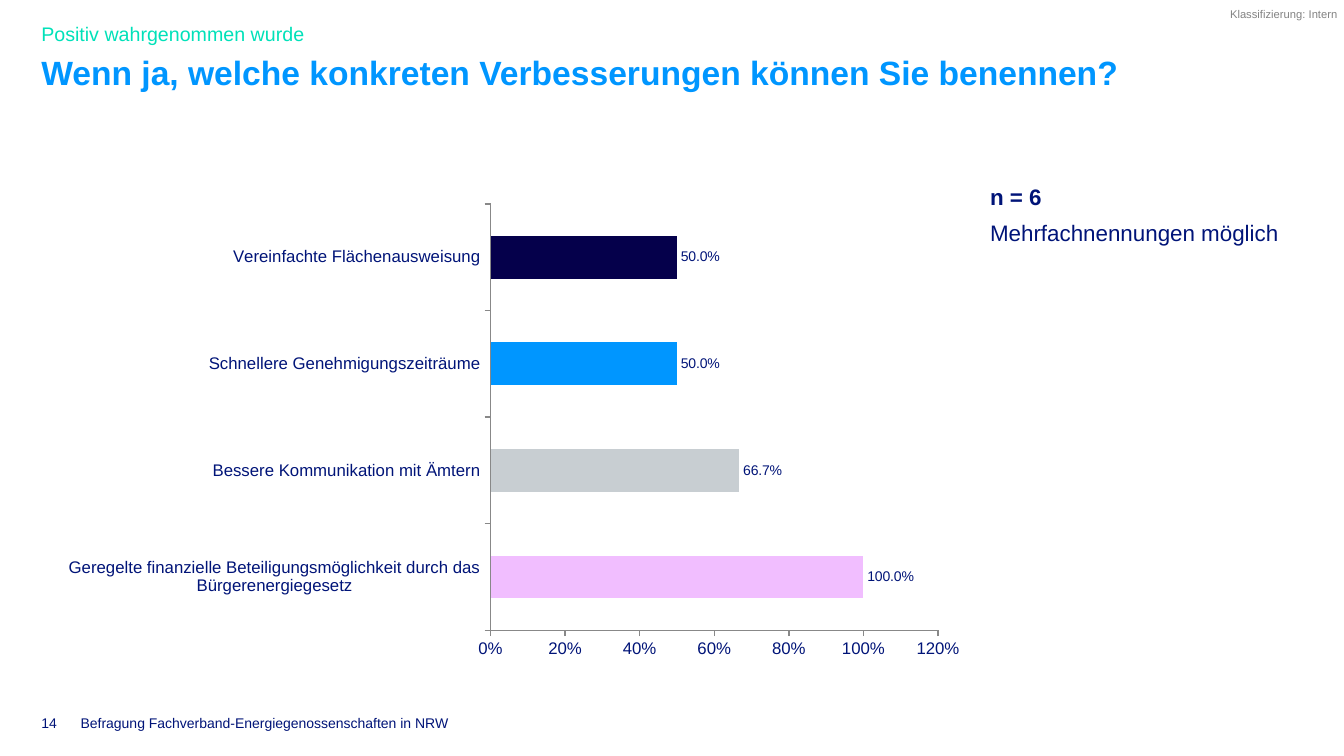
import pptx
import pptx.chart.data
import pptx.dml.color
import pptx.enum.chart
import pptx.enum.text
import pptx.oxml
import pptx.util
from pptx.util import Inches

NAVY = "001478"
BLUE = "0096FF"
GRAY = "888888"
TOP = pptx.enum.text.MSO_ANCHOR.TOP
BOTTOM = pptx.enum.text.MSO_ANCHOR.BOTTOM

ANSWERS = [
    ("Geregelte finanzielle Beteiligungsmöglichkeit durch das Bürgerenergiegesetz", 1, "F1BEFF"),
    ("Bessere Kommunikation mit Ämtern", 0.667, "C8CED2"),
    ("Schnellere Genehmigungszeiträume", 0.5, BLUE),
    ("Vereinfachte Flächenausweisung", 0.5, "05004B"),
]


def rgb(color):
    return pptx.dml.color.RGBColor.from_string(color)


def set_font(font, size, color, bold=False):
    font.name = "Arial"
    font.size = pptx.util.Pt(size)
    font.bold = bold
    font.color.rgb = rgb(color)


def add_text(s, box, lines, size, color, bold=(), anchor=TOP, wrap=True):
    tf = s.shapes.add_textbox(*map(Inches, box)).text_frame
    tf.margin_left = tf.margin_top = tf.margin_right = tf.margin_bottom = 0
    tf.word_wrap = wrap
    tf.vertical_anchor = anchor
    tf.text = "\n".join(lines)
    for i, p in enumerate(tf.paragraphs):
        if i:
            p.space_before = pptx.util.Pt(6)
        for r in p.runs:
            set_font(r.font, size, color, i in bold)


def style_axis(axis):
    axis.has_major_gridlines = False
    axis.major_tick_mark = pptx.enum.chart.XL_TICK_MARK.OUTSIDE
    axis.minor_tick_mark = pptx.enum.chart.XL_TICK_MARK.NONE
    axis.format.line.color.rgb = rgb(GRAY)
    axis.format.line.width = pptx.util.Pt(1)
    set_font(axis.tick_labels.font, 12, NAVY)


def place_plot(chart, x, y, w, h):
    area = chart._chartSpace.chart.plotArea
    for old in area.findall(pptx.oxml.ns.qn("c:layout")):
        area.remove(old)
    area.insert(0, pptx.oxml.parse_xml(
        f'<c:layout {pptx.oxml.ns.nsdecls("c")}><c:manualLayout>'
        '<c:layoutTarget val="inner"/><c:xMode val="edge"/><c:yMode val="edge"/>'
        f'<c:x val="{x}"/><c:y val="{y}"/><c:w val="{w}"/><c:h val="{h}"/>'
        '</c:manualLayout></c:layout>'))


def add_bar_chart(s, box, answers):
    data = pptx.chart.data.CategoryChartData()
    data.categories = [name for name, _, _ in answers]
    data.add_series("Series 1", [value for _, value, _ in answers])
    chart = s.shapes.add_chart(
        pptx.enum.chart.XL_CHART_TYPE.BAR_CLUSTERED, *map(Inches, box), data).chart
    chart.has_legend = False
    chart.has_title = False
    set_font(chart.font, 10, NAVY)
    place_plot(chart, 0.475, 0.02, 0.483, 0.9)

    style_axis(chart.category_axis)
    axis = chart.value_axis
    style_axis(axis)
    axis.minimum_scale = 0
    axis.maximum_scale = 1.2
    axis.major_unit = 0.2
    axis.tick_labels.number_format = "0%"
    axis.tick_labels.number_format_is_linked = False

    plot = chart.plots[0]
    plot.gap_width = 150
    plot.vary_by_categories = False
    for i, (_, _, color) in enumerate(answers):
        fill = plot.series[0].points[i].format.fill
        fill.solid()
        fill.fore_color.rgb = rgb(color)

    labels = plot.series[0].data_labels
    labels.show_value = True
    labels.number_format = "#0.0%"
    labels.number_format_is_linked = False
    labels.position = pptx.enum.chart.XL_LABEL_POSITION.OUTSIDE_END
    set_font(labels.font, 10, NAVY)


def main():
    prs = pptx.Presentation()
    prs.slide_width = Inches(13.33)
    prs.slide_height = Inches(7.5)
    s = prs.slides.add_slide(prs.slide_layouts[6])

    add_text(s, (12.2, 0.07, 1.13, 0.13), ["Klassifizierung: Intern"], 8, "838383", wrap=False)
    add_text(s, (0.41, 0.17, 8.23, 0.28), ["Positiv wahrgenommen wurde"], 14, "00E1B9", anchor=BOTTOM)
    add_text(s, (0.41, 0.52, 12.52, 0.87),
             ["Wenn ja, welche konkreten Verbesserungen können Sie benennen?"], 24, BLUE, bold=(0,))
    add_bar_chart(s, (0.5, 1.93, 9.19, 4.7), ANSWERS)
    add_text(s, (9.82, 1.82, 3.11, 0.87), ["n = 6", "Mehrfachnennungen möglich"], 16, NAVY, bold=(0,))
    add_text(s, (0.41, 7.1, 0.24, 0.16), ["14"], 10, NAVY, anchor=BOTTOM, wrap=False)
    add_text(s, (0.8, 7.1, 5.63, 0.16), ["Befragung Fachverband-Energiegenossenschaften in NRW"],
             10, NAVY, anchor=BOTTOM, wrap=False)

    prs.save("out.pptx")


if __name__ == "__main__":
    main()
